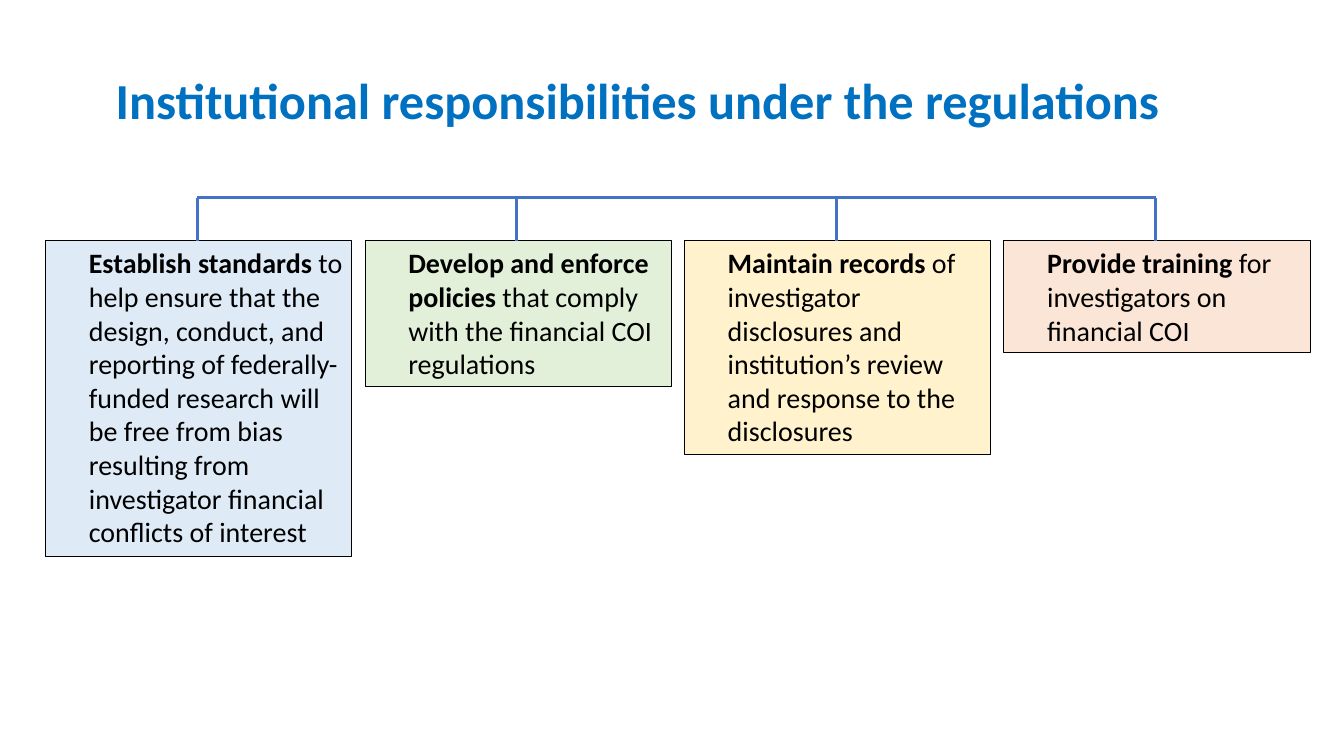
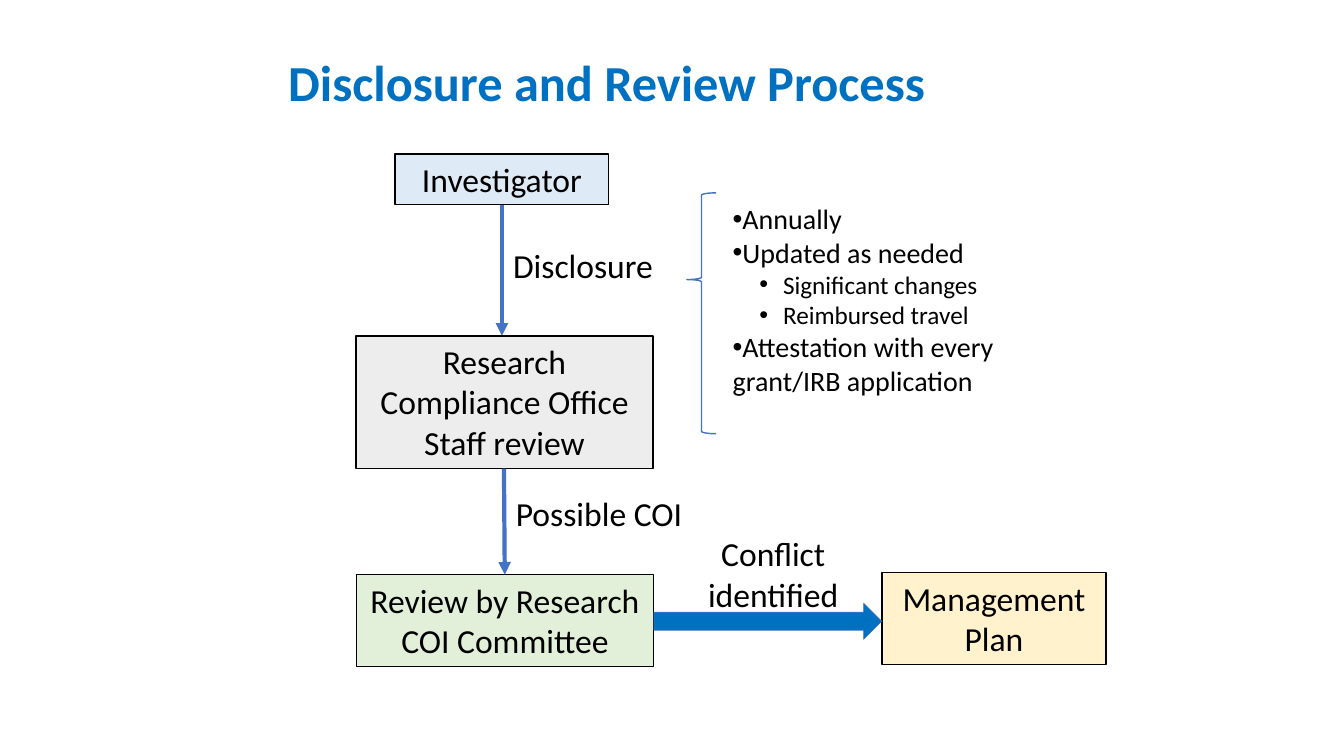
"""Build two slides on duties and review under the conflict of interest rules."""
from dataclasses import dataclass

from lxml import etree
from pptx import Presentation
from pptx.dml.color import RGBColor
from pptx.enum.shapes import MSO_CONNECTOR, MSO_SHAPE
from pptx.enum.text import MSO_ANCHOR, MSO_AUTO_SIZE, PP_ALIGN
from pptx.oxml.ns import qn
from pptx.shapes.autoshape import Shape
from pptx.slide import Slide
from pptx.text.text import TextFrame
from pptx.util import Cm, Pt

RECT = MSO_SHAPE.RECTANGLE
ARROW = MSO_SHAPE.RIGHT_ARROW
BRACE = MSO_SHAPE.LEFT_BRACE
LINE = MSO_CONNECTOR.STRAIGHT
LEFT = PP_ALIGN.LEFT
CENTER = PP_ALIGN.CENTER
TOP = MSO_ANCHOR.TOP
MIDDLE = MSO_ANCHOR.MIDDLE
FIXED = MSO_AUTO_SIZE.NONE


@dataclass(frozen=True)
class Theme:
    """Font, colours and type sizes of the deck."""

    font: str = "Calibri"
    black: str = "000000"
    title: str = "0070C0"
    line: str = "4472C4"
    blue: str = "DEEBF7"
    green: str = "E2F0D9"
    gold: str = "FFF2CC"
    peach: str = "FBE5D6"
    gray: str = "EDEDED"
    head: int = 36
    node: int = 24
    text: int = 20
    small: int = 18


@dataclass(frozen=True)
class Box:
    """A place on the slide in centimetres."""

    x: float
    y: float
    w: float
    h: float

    def lengths(self) -> tuple[Cm, Cm, Cm, Cm]:
        """Return left, top, width and height."""
        return Cm(self.x), Cm(self.y), Cm(self.w), Cm(self.h)


@dataclass(frozen=True)
class Card:
    """A duty with a bold lead."""

    lead: str
    rest: str
    fill: str
    height: float


@dataclass(frozen=True)
class Node:
    """A step in the process."""

    text: str
    box: Box
    fill: str


@dataclass(frozen=True)
class Label:
    """Plain text beside an arrow."""

    text: str
    box: Box
    align: PP_ALIGN = LEFT
    wrap: bool = False


@dataclass(frozen=True)
class Item:
    """A list entry and its level."""

    text: str
    level: int = 0


THEME = Theme()
CARD_X, CARD_Y, CARD_W, PITCH = 1.15, 6.07, 7.72, 8.05
BUS_Y, STEM = 4.98, 3.82

CARDS = (
    Card("Establish standards", " to help ensure that the design, conduct, and reporting of "
         "federally-funded research will be free from bias resulting from investigator "
         "financial conflicts of interest", THEME.blue, 7.95),
    Card("Develop and enforce policies", " that comply with the financial COI regulations",
         THEME.green, 3.68),
    Card("Maintain records", " of investigator disclosures and institution’s review and "
         "response to the disclosures", THEME.gold, 5.38),
    Card("Provide training", " for investigators on financial COI", THEME.peach, 2.82),
)
NODES = (
    Node("Investigator", Box(9.96, 3.88, 5.38, 1.27), THEME.blue),
    Node("Research Compliance Office\nStaff review", Box(8.97, 8.47, 7.49, 3.33), THEME.gray),
    Node("Review by Research COI Committee", Box(8.98, 14.48, 7.49, 2.31), THEME.green),
    Node("Management Plan", Box(22.23, 14.43, 5.64, 2.31), THEME.gold),
)
FLOWS = ((12.65, 5.16, 12.65, 8.46), (12.7, 11.81, 12.72, 14.48))
LABELS = (
    Label("Disclosure", Box(12.68, 6.05, 4.06, 1.27)),
    Label("Possible COI", Box(12.75, 12.29, 4.75, 1.27)),
    Label("Conflict identified", Box(17.43, 13.31, 4.11, 2.31), CENTER, True),
)
ITEMS = (
    Item("Annually"),
    Item("Updated as needed"),
    Item("Significant changes", 1),
    Item("Reimbursed travel", 1),
    Item("Attestation with every grant/IRB application"),
)


def rgb(code: str) -> RGBColor:
    """Turn a hex code into a colour."""
    return RGBColor.from_string(code)


def style(frame: TextFrame, size: float, color: str = THEME.black,
          bold: bool = False, align: PP_ALIGN = LEFT) -> None:
    """Format all runs in a frame."""
    for para in frame.paragraphs:
        para.alignment = align
        for run in para.runs:
            font = run.font
            font.name, font.size, font.bold = THEME.font, Pt(size), bold
            font.color.rgb = rgb(color)


def place(shape: Shape, box: Box) -> None:
    """Move a placeholder into a box."""
    shape.left, shape.top, shape.width, shape.height = box.lengths()


def add_title(slide: Slide, text: str, box: Box) -> None:
    """Fill the title placeholder."""
    title = slide.shapes.title
    place(title, box)
    frame = title.text_frame
    frame.text = text
    frame.auto_size, frame.vertical_anchor = FIXED, MIDDLE
    frame.paragraphs[0].line_spacing = 0.9
    style(frame, THEME.head, THEME.title, True)


def add_form(slide: Slide, kind: MSO_SHAPE, box: Box, fill: str | None,
             line: str, width: float) -> Shape:
    """Draw a preset shape with a flat fill and line."""
    shape = slide.shapes.add_shape(kind, *box.lengths())
    shape.shadow.inherit = False
    if fill:
        shape.fill.solid()
        shape.fill.fore_color.rgb = rgb(fill)
    else:
        shape.fill.background()
    shape.line.color.rgb = rgb(line)
    shape.line.width = Pt(width)
    frame = shape.text_frame
    frame.word_wrap, frame.vertical_anchor = True, TOP
    return shape


def add_line(slide: Slide, ends: tuple[float, float, float, float],
             width: float, tip: bool = False) -> None:
    """Draw a straight line, with an arrow tip if asked."""
    line = slide.shapes.add_connector(LINE, *map(Cm, ends))
    line.line.color.rgb = rgb(THEME.line)
    line.line.width = Pt(width)
    props = line.element.spPr
    if tip:
        etree.SubElement(props.find(qn("a:ln")), qn("a:tailEnd"), type="triangle")
    etree.SubElement(props, qn("a:effectLst"))


def add_card(slide: Slide, card: Card, left: float) -> None:
    """Draw a duty card."""
    box = Box(left, CARD_Y, CARD_W, card.height)
    frame = add_form(slide, RECT, box, card.fill, THEME.black, 0.75).text_frame
    frame.margin_right = Cm(0.2)
    para = frame.paragraphs[0]
    para.text = card.lead
    para.add_run().text = card.rest
    para._p.get_or_add_pPr().set("marL", str(Cm(0.84)))
    style(frame, THEME.text)
    para.runs[0].font.bold = True


def add_node(slide: Slide, node: Node) -> None:
    """Draw a process step."""
    frame = add_form(slide, RECT, node.box, node.fill, THEME.black, 1).text_frame
    frame.text = node.text
    style(frame, THEME.node, align=CENTER)


def add_label(slide: Slide, label: Label) -> None:
    """Write a label."""
    frame = slide.shapes.add_textbox(*label.box.lengths()).text_frame
    frame.word_wrap = label.wrap
    frame.text = label.text
    style(frame, THEME.node, align=label.align)


def add_list(slide: Slide, items: tuple[Item, ...], box: Box) -> None:
    """Fill the body placeholder with a bullet list."""
    body = slide.placeholders[1]
    place(body, box)
    frame = body.text_frame
    frame.auto_size, frame.vertical_anchor = FIXED, TOP
    frame.margin_right = Cm(2.6)
    frame.text = "\n".join(item.text for item in items)
    style(frame, THEME.text)
    for para, item in zip(frame.paragraphs, items):
        para.level = item.level
        para.space_before = Pt(0)
        props = para._p.get_or_add_pPr()
        props.set("marL", str(Cm(1.27 * item.level)))
        props.set("indent", str(Cm(-0.6 * item.level)))
        etree.SubElement(props, qn("a:buChar"), char="•")
        if item.level:
            para.runs[0].font.size = Pt(THEME.small)


def add_duties(slide: Slide) -> None:
    """Build the slide of duties."""
    add_title(slide, "Institutional responsibilities under the regulations",
              Box(2.66, 1.3, 27.99, 2.59))
    lefts = [CARD_X + PITCH * i for i in range(len(CARDS))]
    for card, left in zip(CARDS, lefts):
        add_card(slide, card, left)
    stems = [left + STEM for left in lefts]
    for stem in stems:
        add_line(slide, (stem, BUS_Y, stem, CARD_Y), 2.25)
    add_line(slide, (stems[0], BUS_Y, stems[-1], BUS_Y), 2.25)


def add_process(slide: Slide) -> None:
    """Build the slide of the review process."""
    add_title(slide, "Disclosure and Review Process", Box(7.01, 1.24, 19.84, 1.8))
    add_list(slide, ITEMS, Box(18.21, 4.96, 10.29, 5.38))
    for node in NODES:
        add_node(slide, node)
    for flow in FLOWS:
        add_line(slide, flow, 3, True)
    brace = add_form(slide, BRACE, Box(17.31, 4.86, 0.74, 6.07), None, THEME.line, 1)
    brace.adjustments[0], brace.adjustments[1] = 0.08, 0.36
    add_form(slide, ARROW, Box(16.48, 15.2, 5.74, 0.91), THEME.title, THEME.line, 0.5)
    for label in LABELS:
        add_label(slide, label)


def main() -> None:
    """Make and save the deck."""
    deck = Presentation()
    deck.slide_width, deck.slide_height = Cm(33.87), Cm(19.05)
    add_duties(deck.slides.add_slide(deck.slide_layouts[5]))
    add_process(deck.slides.add_slide(deck.slide_layouts[1]))
    deck.save("out.pptx")


if __name__ == "__main__":
    main()
